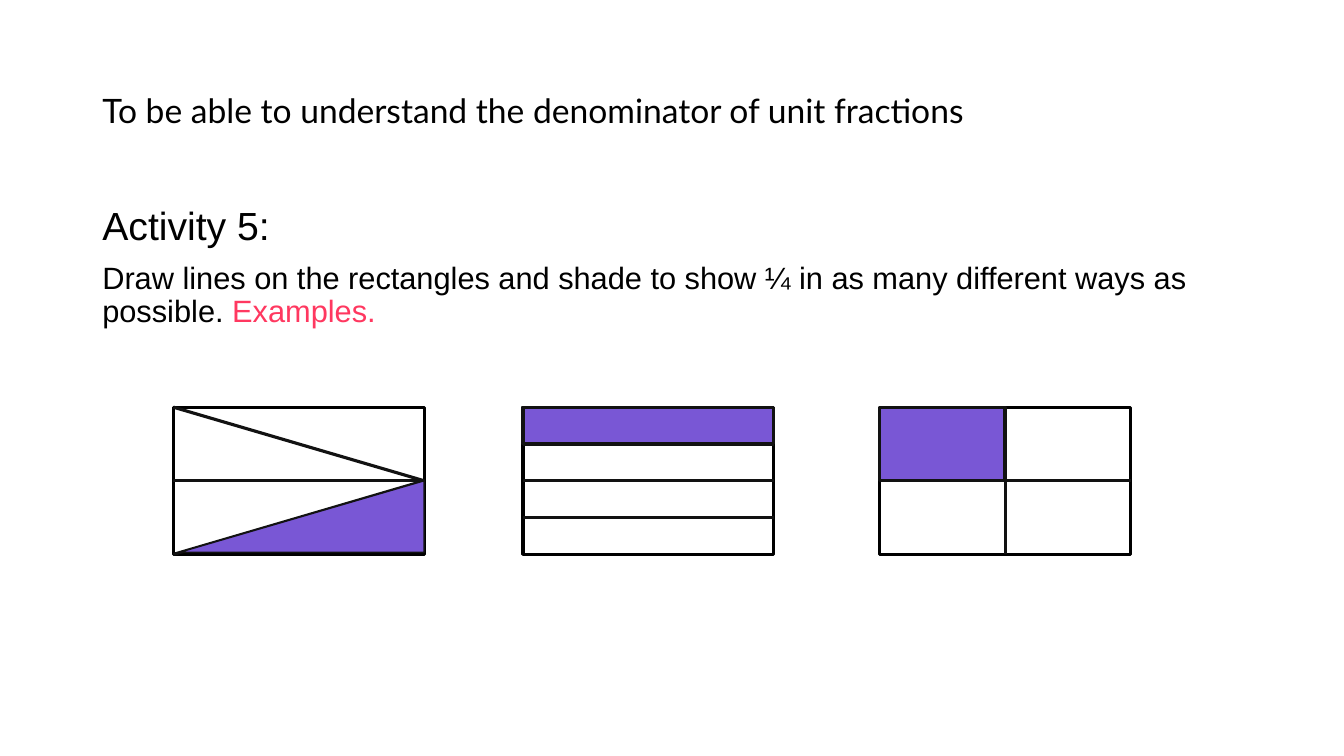
from lxml.etree import SubElement
from pptx import Presentation
from pptx.dml.color import RGBColor
from pptx.enum.shapes import MSO_CONNECTOR as Connector, MSO_SHAPE as Shape
from pptx.enum.text import MSO_ANCHOR as Anchor
from pptx.oxml.ns import qn
from pptx.util import Cm, Pt

COLORS = {
    "white": "FFFFFF",
    "black": "000000",
    "divider": "121212",
    "shade": "7957D5",
    "answer": "FF3860",
}
TOP, RIGHT, BOTTOM, LEFT = 0, 3, 2, 1
FIGURE_TOP, FIGURE_WIDTH, FIGURE_HEIGHT = 10.26, 6.32, 3.71


def color(name):
    return RGBColor.from_string(COLORS[name])


def add_text(page, left, top, width, height, paragraphs, anchor=Anchor.TOP):
    """Place paragraphs, each a list of (text, font, size, color) spans."""
    frame = page.shapes.add_textbox(Cm(left), Cm(top), Cm(width), Cm(height)).text_frame
    frame.word_wrap = True
    frame.vertical_anchor = anchor
    for index, spans in enumerate(paragraphs):
        para = frame.add_paragraph() if index else frame.paragraphs[0]
        layout = {"line_spacing": 0.9, "space_before": Pt(10 if index else 0)}
        for name, value in layout.items():
            setattr(para, name, value)
        for text, font, size, tint in spans:
            span = para.add_run()
            span.text = text
            for name, value in {"name": font, "size": Pt(size)}.items():
                setattr(span.font, name, value)
            span.font.color.rgb = color(tint)


def paint(shape, fill, line, weight=2.25):
    shape.shadow.inherit = False
    shape.fill.solid()
    shape.fill.fore_color.rgb = color(fill)
    shape.line.color.rgb = color(line)
    shape.line.width = Pt(weight)


def add_rectangle(page, left, top, width, height, fill, line):
    box = page.shapes.add_shape(
        Shape.RECTANGLE, Cm(left), Cm(top), Cm(width), Cm(height))
    paint(box, fill, line)
    return box


def add_frame(page, left, top, width, height):
    return add_rectangle(page, left, top, width, height, "white", "black")


def add_divider(page, start, end):
    line = page.shapes.add_connector(
        Connector.STRAIGHT, *(Cm(value) for value in (*start, *end)))
    line.line.color.rgb = color("divider")
    line.line.width = Pt(2.25)
    SubElement(line._element.spPr, qn("a:effectLst"))
    return line


def join_sides(page, box, begin_side, end_side):
    """Divide a box through the middles of two opposite sides."""
    line = add_divider(page, (0, 0), (1, 1))
    line.begin_connect(box, begin_side)
    line.end_connect(box, end_side)


def add_triangles_figure(page, left, top, width, height):
    box = add_frame(page, left, top, width, height)
    right, middle, bottom = left + width, top + height / 2, top + height
    join_sides(page, box, LEFT, RIGHT)
    for corner in (top, bottom):
        line = add_divider(page, (left, corner), (right, middle))
        line.end_connect(box, RIGHT)
    inset = 0.15
    outline = page.shapes.build_freeform(Cm(left + inset), Cm(bottom - 0.05), 1.0)
    outline.add_line_segments(
        [(Cm(right), Cm(bottom - 0.05)), (Cm(right), Cm(middle))], close=True)
    paint(outline.convert_to_shape(), "shade", "divider", 1)


def add_strips_figure(page, left, top, width, height):
    box = add_frame(page, left, top, width, height)
    strip = height / 4
    join_sides(page, box, LEFT, RIGHT)
    for row in (1, 3):
        level = top + row * strip
        add_divider(page, (left, level), (left + width, level))
    add_rectangle(page, left, top, width, strip, "shade", "divider")


def add_quarters_figure(page, left, top, width, height):
    box = add_frame(page, left, top, width, height)
    join_sides(page, box, TOP, BOTTOM)
    join_sides(page, box, LEFT, RIGHT)
    add_rectangle(page, left, top, width / 2, height / 2, "shade", "divider")


def build_activity_slide(deck):
    page = deck.slides.add_slide(deck.slide_layouts[6])
    add_text(page, 2.33, 1.01, 24.38, 3.68, [
        [("To be able to understand the denominator of unit fractions",
          "Lato", 24, "black")],
    ], Anchor.MIDDLE)
    add_text(page, 2.33, 5.08, 29.21, 12.09, [
        [("Activity 5:", "Arial", 28, "black")],
        [("Draw lines on the rectangles and shade to show ¼ in as many "
          "different ways as possible. ", "Arial", 22, "black"),
         ("Examples.", "Arial", 22, "answer")],
    ])
    figures = [(4.37, add_triangles_figure), (13.18, add_strips_figure),
               (22.17, add_quarters_figure)]
    for left, add_figure in figures:
        add_figure(page, left, FIGURE_TOP, FIGURE_WIDTH, FIGURE_HEIGHT)


def main():
    deck = Presentation()
    deck.slide_width, deck.slide_height = Cm(33.87), Cm(19.05)
    build_activity_slide(deck)
    deck.save("out.pptx")


if __name__ == "__main__":
    main()
